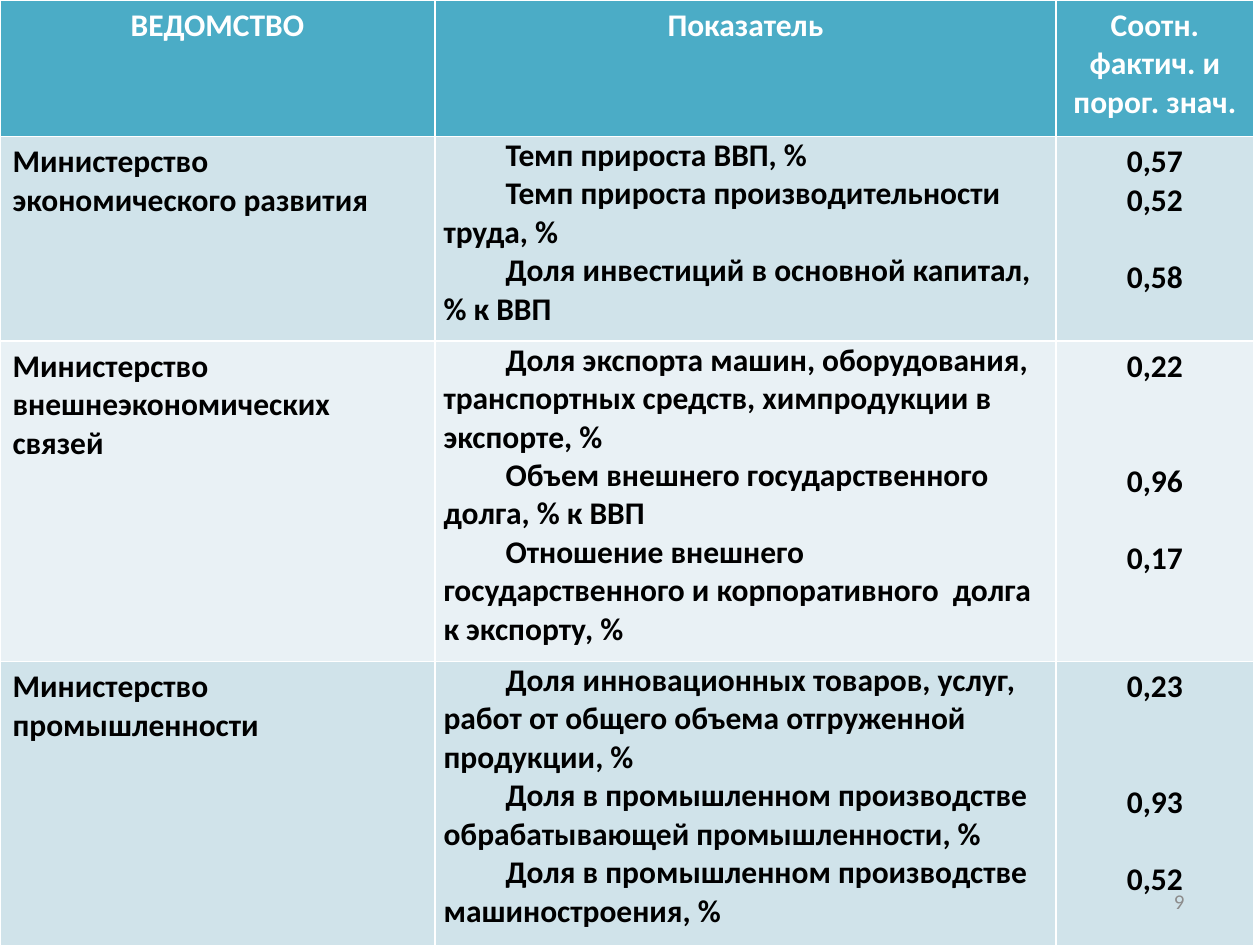
from pptx import Presentation
from pptx.dml.color import RGBColor
from pptx.enum import text
from pptx.util import Pt

HUES = {"head": "4BACC6", "dark": "D0E3EA", "pale": "E9F1F5",
        "white": "FFFFFF", "black": "000000", "grey": "8C8C8C"}
LEFT, MID, RIGHT = text.PP_ALIGN.LEFT, text.PP_ALIGN.CENTER, text.PP_ALIGN.RIGHT
LINE = 22  # height of one 18 pt line

WIDTHS = [248.5, 355, 113]
HEIGHTS = [78, 117, 183, 170]
HEADS = ["ВЕДОМСТВО", "Показатель", "Соотн. фактич. и порог. знач."]

# Ministry, then its indicators: name, value, lines from the previous value
ROWS = [
    ("Министерство экономического развития", [
        ("Темп прироста ВВП, %", "0,57", 1),
        ("Темп прироста производительности труда, %", "0,52", 1),
        ("Доля инвестиций в основной капитал, % к ВВП", "0,58", 2)]),
    ("Министерство внешнеэкономических связей", [
        ("Доля экспорта машин, оборудования, транспортных средств, "
         "химпродукции в экспорте, %", "0,22", 1),
        ("Объем внешнего государственного  долга, % к ВВП", "0,96", 3),
        ("Отношение внешнего государственного и корпоративного  долга "
         "к экспорту, %", "0,17", 2)]),
    ("Министерство промышленности", [
        ("Доля инновационных товаров, услуг, работ от общего объема "
         "отгруженной продукции, %", "0,23", 1),
        ("Доля в промышленном производстве обрабатывающей "
         "промышленности, %", "0,93", 3),
        ("Доля в промышленном производстве машиностроения, %", "0,52", 2)]),
]


class Deck:
    """Holds the text style and the current slide."""
    font = "Calibri"

    def __init__(self, slide):
        self.slide = slide

    def style(self, frame, hue, align, size=18, bold=True):
        for para in frame.paragraphs:
            para.alignment = align
            for run in para.runs:
                run.font.name = self.font
                run.font.size = Pt(size)
                run.font.bold = bold
                run.font.color.rgb = RGBColor.from_string(HUES[hue])

    def table(self, widths, heights):
        grid = self.slide.shapes.add_table(
            len(heights), len(widths), 0, 0,
            Pt(sum(widths)), Pt(sum(heights))).table
        for col, width in zip(grid.columns, widths):
            col.width = Pt(width)
        for row, height in zip(grid.rows, heights):
            row.height = Pt(height)
        return grid

    def cell(self, cell, words, fill, hue="black", align=LEFT):
        cell.fill.solid()
        cell.fill.fore_color.rgb = RGBColor.from_string(HUES[fill])
        cell.text_frame.text = words
        self.style(cell.text_frame, hue, align)

    def names(self, cell, names, fill):
        self.cell(cell, "\n".join(names), fill)
        cell.margin_left = cell.margin_right = Pt(5)
        cell.margin_top = cell.margin_bottom = 0
        for para in cell.text_frame.paragraphs:
            props = para._p.get_or_add_pPr()
            props.set("marL", "0")
            props.set("indent", str(Pt(35.4)))

    def values(self, cell, values, steps, fill):
        self.cell(cell, "\n".join(values), fill, align=MID)
        for para, step in zip(cell.text_frame.paragraphs, steps):
            para.space_before = Pt(LINE * (step - 1))

    def label(self, words, left, top, width, height):
        frame = self.slide.shapes.add_textbox(
            Pt(left), Pt(top), Pt(width), Pt(height)).text_frame
        frame.word_wrap = True
        frame.vertical_anchor = text.MSO_ANCHOR.MIDDLE
        frame.text = words
        self.style(frame, "grey", RIGHT, size=12, bold=False)


def main():
    prs = Presentation()
    prs.slide_width, prs.slide_height = Pt(720), Pt(540)
    deck = Deck(prs.slides.add_slide(prs.slide_layouts[6]))

    # Header row
    grid = deck.table(WIDTHS, HEIGHTS)
    for col, head in enumerate(HEADS):
        deck.cell(grid.cell(0, col), head, "head", "white", MID)

    # Ministries with their indicators
    for row, (office, items) in enumerate(ROWS, 1):
        fill = "dark" if row % 2 else "pale"
        names, values, steps = zip(*items)
        deck.cell(grid.cell(row, 0), office, fill)
        deck.names(grid.cell(row, 1), names, fill)
        deck.values(grid.cell(row, 2), values, steps, fill)

    # Slide number
    deck.label("9", 516, 500.5, 168, 28.8)
    prs.save("out.pptx")


if __name__ == "__main__":
    main()
